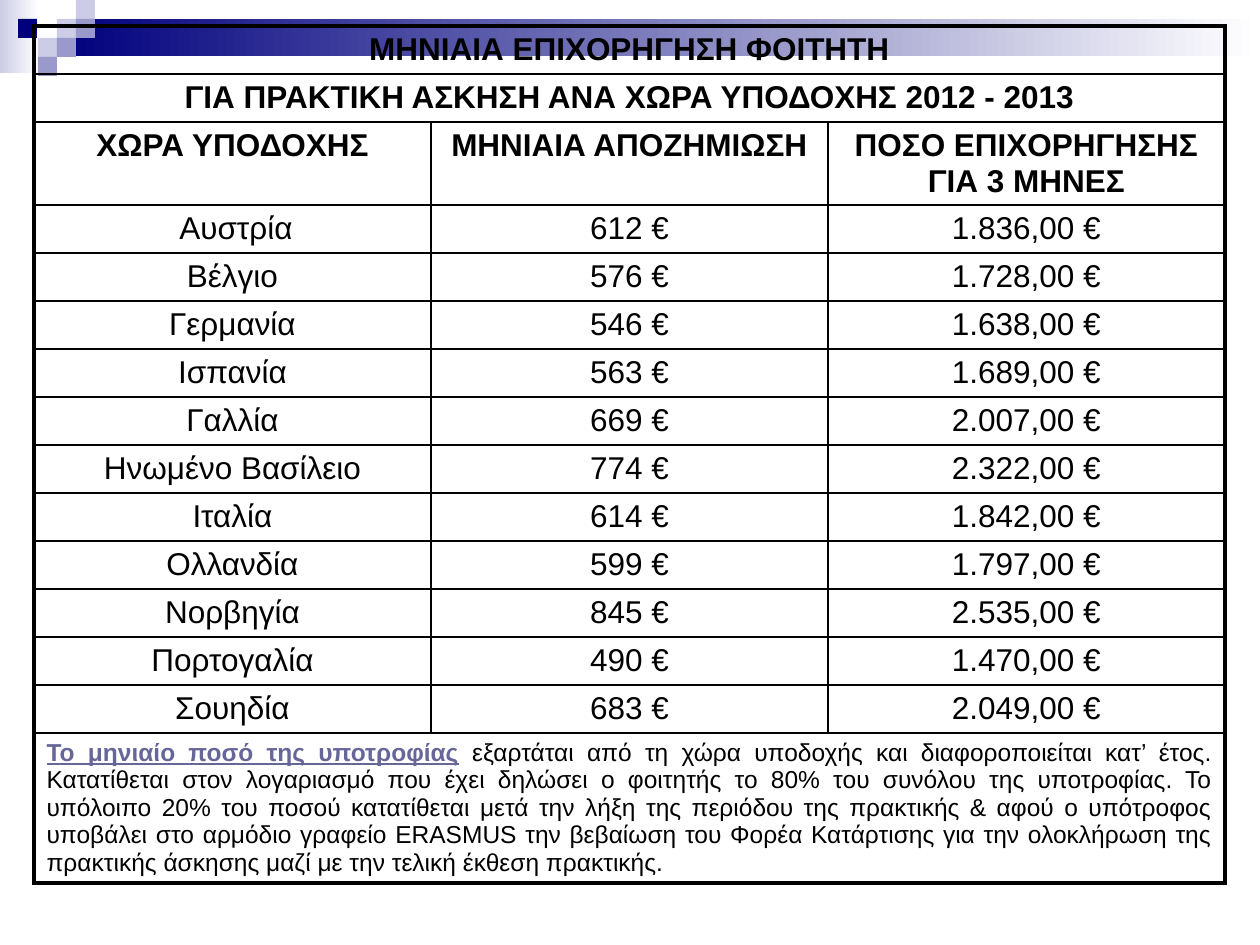
from lxml import etree
from pptx import Presentation
from pptx import util as u
from pptx.dml.color import RGBColor
from pptx.enum import shapes, text
from pptx.oxml import ns

PX = 914400 // 126
C = {"navy": "00007D", "lilac": "CCCCE6", "violet": "9999CC",
     "white": "FFFFFF", "black": "000000", "accent": "666699"}


def add_rect(x, y, w, h, *colors):
    sp = s.shapes.add_shape(shapes.MSO_SHAPE.RECTANGLE, x * PX, y * PX, w * PX, h * PX)
    sp.shadow.inherit = False
    sp.line.fill.background()
    if len(colors) == 1:
        sp.fill.solid()
        sp.fill.fore_color.rgb = RGBColor.from_string(C[colors[0]])
        return
    sp.fill.gradient()
    sp.fill.gradient_angle = 0
    for stop, position, color in zip(sp.fill.gradient_stops, (0, 1), colors):
        stop.position = position
        stop.color.rgb = RGBColor.from_string(C[color])


def set_borders(cell, **widths):
    tcPr = cell._tc.get_or_add_tcPr()
    for i, side in enumerate("LRTB"):
        ln = etree.Element(ns.qn("a:ln" + side), w=str(u.Pt(widths[side])))
        fill = etree.SubElement(ln, ns.qn("a:solidFill"))
        etree.SubElement(fill, ns.qn("a:srgbClr"), val=C["black"])
        tcPr.insert(i, ln)


prs = Presentation()
prs.slide_width, prs.slide_height = u.Inches(10), u.Inches(7.5)
s = prs.slides.add_slide(prs.slide_layouts[6])

add_rect(0, 0, 39, 73, "lilac", "white")
add_rect(57, 19, 1203, 37, "navy", "white")
for x, y, color in [(57, 19, "lilac"), (76, 0, "lilac"), (76, 19, "violet"),
                    (38, 38, "lilac"), (18, 19, "navy"), (57, 38, "violet"),
                    (38, 57, "violet")]:
    add_rect(x, y, 19, 19, color)

titles = ["ΜΗΝΙΑΙΑ ΕΠΙΧΟΡΗΓΗΣΗ ΦΟΙΤΗΤΗ",
          "ΓΙΑ ΠΡΑΚΤΙΚΗ ΑΣΚΗΣΗ ΑΝΑ ΧΩΡΑ ΥΠΟΔΟΧΗΣ 2012 - 2013"]
headers = ["ΧΩΡΑ ΥΠΟΔΟΧΗΣ", "ΜΗΝΙΑΙΑ ΑΠΟΖΗΜΙΩΣΗ", "ΠΟΣΟ ΕΠΙΧΟΡΗΓΗΣΗΣ ΓΙΑ 3 ΜΗΝΕΣ"]
grants = [(" Αυστρία", "612 €", "1.836,00 €"),
          ("Βέλγιο", "576 €", "1.728,00 €"),
          ("Γερμανία", "546 €", "1.638,00 €"),
          ("Ισπανία", "563 €", "1.689,00 €"),
          ("Γαλλία", "669 €", "2.007,00 €"),
          ("Ηνωμένο Βασίλειο", "774 €", "2.322,00 €"),
          ("Ιταλία", "614 €", "1.842,00 €"),
          ("Ολλανδία", "599 €", "1.797,00 €"),
          ("Νορβηγία", "845 €", "2.535,00 €"),
          ("Πορτογαλία", "490 €", "1.470,00 €"),
          ("Σουηδία", "683 €", "2.049,00 €")]
note_lead = "Το μηνιαίο ποσό της υποτροφίας"
note_first = " εξαρτάται από τη χώρα υποδοχής και διαφοροποιείται κατ’ έτος."
note_rest = ("Κατατίθεται στον λογαριασμό που έχει δηλώσει ο φοιτητής το 80% του συνόλου "
             "της υποτροφίας. Το υπόλοιπο 20% του ποσού κατατίθεται μετά την λήξη της "
             "περιόδου της πρακτικής & αφού ο υπότροφος υποβάλει στο αρμόδιο γραφείο "
             "ERASMUS την βεβαίωση του Φορέα Κατάρτισης για την ολοκλήρωση της πρακτικής "
             "άσκησης μαζί με την τελική έκθεση πρακτικής.")

rows = [[t, "", ""] for t in titles] + [headers] + grants + [["", "", ""]]
heights = [48, 48, 83] + [48] * len(grants) + [150]
last = len(rows) - 1
tbl = s.shapes.add_table(len(rows), 3, 34 * PX, 26 * PX, 1191 * PX, sum(heights) * PX).table
tbl.first_row = tbl.horz_banding = False
for col in tbl.columns:
    col.width = 397 * PX
for i, (row, height) in enumerate(zip(rows, heights)):
    tbl.rows[i].height = height * PX
    merged = i in (0, 1, last)
    if merged:
        tbl.cell(i, 0).merge(tbl.cell(i, 2))
    for j, value in enumerate(row):
        cell = tbl.cell(i, j)
        cell.fill.background()
        set_borders(cell, L=2.25 if j == 0 else 1,
                    R=2.25 if j == 2 or merged else 1,
                    T=2.25 if i == 0 else 1, B=2.25 if i == last else 1)
        if not value:
            continue
        p = cell.text_frame.paragraphs[0]
        p.text = value
        p.alignment = text.PP_ALIGN.CENTER
        p.font.name, p.font.size, p.font.bold = "Arial", u.Pt(18), i < 3
        p.font.color.rgb = RGBColor.from_string(C["black"])

p = tbl.cell(last, 0).text_frame.paragraphs[0]
p.alignment = text.PP_ALIGN.JUSTIFY
p.font.name, p.font.size = "Arial", u.Pt(14)
for part, color, strong in [(note_lead, "accent", True), (note_first, "black", False),
                            (note_rest, "black", False)]:
    if part == note_rest:
        p.add_line_break()
    r = p.add_run()
    r.text = part
    r.font.bold = r.font.underline = strong
    r.font.color.rgb = RGBColor.from_string(C[color])

prs.save("out.pptx")
